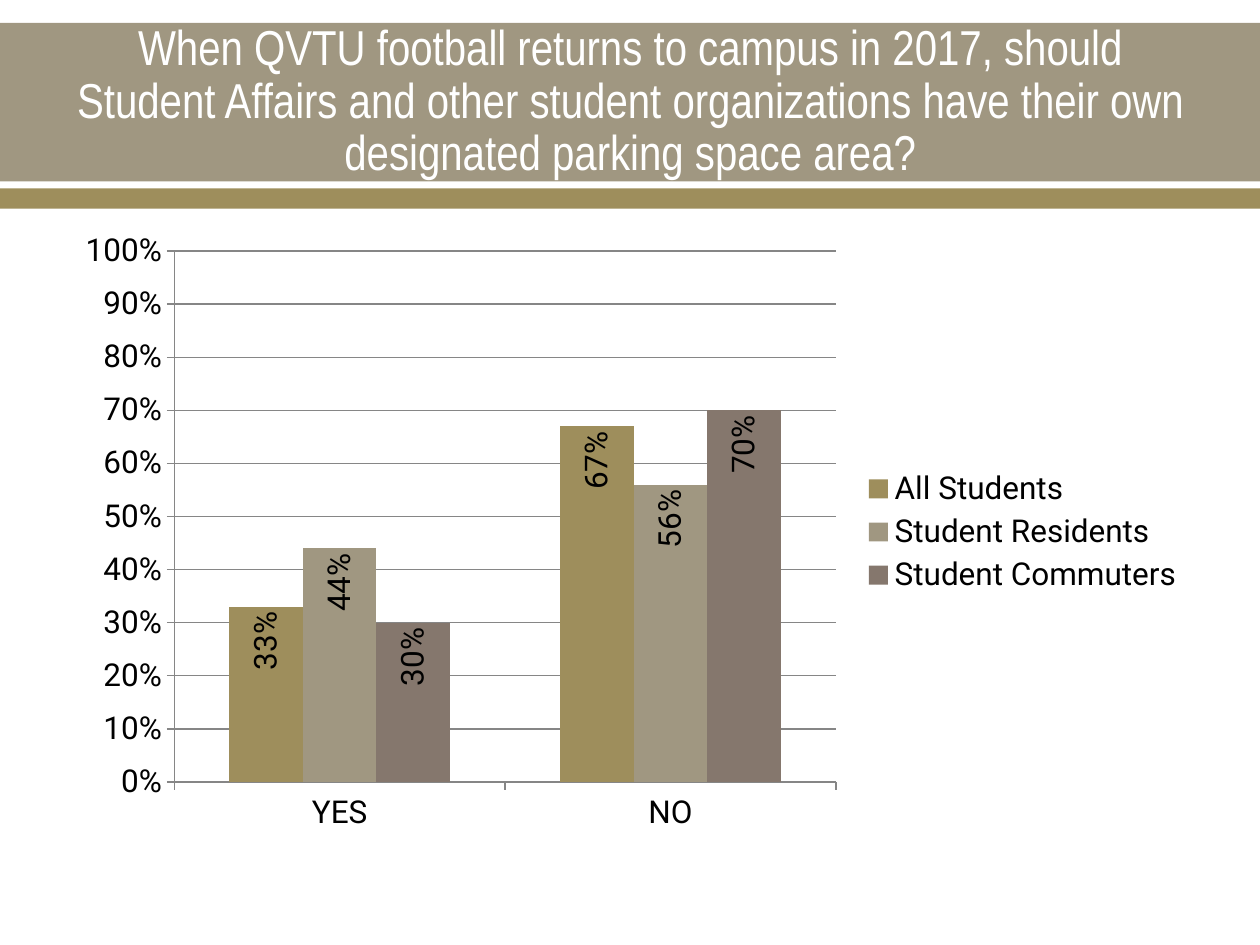
import dataclasses

import pptx
import pptx.chart.data
import pptx.dml.color
import pptx.enum.chart
import pptx.enum.shapes
import pptx.enum.text
import pptx.util


@dataclasses.dataclass(frozen=True)
class Theme:
    gold: str = "9E8E5C"
    stone: str = "A09781"
    taupe: str = "85776D"
    white: str = "FFFFFF"
    black: str = "000000"
    grid: str = "868686"
    title_font: str = "Arial Narrow"
    chart_font: str = "Roboto"
    title_size: int = 28
    chart_size: int = 18


class SurveySlide:
    """Draw the bands, title and chart of one survey question."""

    def __init__(self, slide, theme):
        self.slide = slide
        self.theme = theme

    def color(self, value):
        return pptx.dml.color.RGBColor.from_string(value)

    def box(self, left, top, width, height):
        return [pptx.util.Cm(length) for length in (left, top, width, height)]

    def style_font(self, font, name, size, color):
        font.name = name
        font.size = pptx.util.Pt(size)
        font.bold = False
        font.color.rgb = self.color(color)

    def style_line(self, line):
        line.color.rgb = self.color(self.theme.grid)
        line.width = pptx.util.Pt(0.75)

    def band(self, top, height, fill):
        shape = self.slide.shapes.add_shape(
            pptx.enum.shapes.MSO_SHAPE.RECTANGLE, *self.box(0, top, 25.4, height))
        shape.shadow.inherit = False
        shape.fill.solid()
        shape.fill.fore_color.rgb = self.color(fill)
        shape.line.fill.background()

    def title(self, text, *place):
        frame = self.slide.shapes.add_textbox(*self.box(*place)).text_frame
        frame.word_wrap = True
        frame.vertical_anchor = pptx.enum.text.MSO_ANCHOR.MIDDLE
        paragraph = frame.paragraphs[0]
        paragraph.text = text
        paragraph.alignment = pptx.enum.text.PP_ALIGN.CENTER
        paragraph.line_spacing = 0.9
        self.style_font(paragraph.font, self.theme.title_font,
                        self.theme.title_size, self.theme.white)

    def column_chart(self, categories, series_rows, *place):
        data = pptx.chart.data.CategoryChartData(number_format="0%")
        data.categories = categories
        for name, values, fill in series_rows:
            data.add_series(name, values)
        chart = self.slide.shapes.add_chart(
            pptx.enum.chart.XL_CHART_TYPE.COLUMN_CLUSTERED,
            *self.box(*place), data).chart
        chart.has_title = False
        self.style_font(chart.font, self.theme.chart_font,
                        self.theme.chart_size, self.theme.black)
        chart.has_legend = True
        chart.legend.position = pptx.enum.chart.XL_LEGEND_POSITION.RIGHT
        chart.legend.include_in_layout = False
        self.axes(chart)
        plot = chart.plots[0]
        plot.gap_width = 150
        plot.overlap = 0
        plot.vary_by_categories = False
        for series, (name, values, fill) in zip(plot.series, series_rows):
            series.format.fill.solid()
            series.format.fill.fore_color.rgb = self.color(fill)
            self.upright_labels(series.data_labels)

    def axes(self, chart):
        for axis in (chart.category_axis, chart.value_axis):
            axis.major_tick_mark = pptx.enum.chart.XL_TICK_MARK.OUTSIDE
            axis.minor_tick_mark = pptx.enum.chart.XL_TICK_MARK.NONE
            self.style_line(axis.format.line)
        value_axis = chart.value_axis
        value_axis.minimum_scale = 0
        value_axis.maximum_scale = 1
        value_axis.major_unit = 0.1
        value_axis.tick_labels.number_format = "0%"
        value_axis.tick_labels.number_format_is_linked = False
        value_axis.has_major_gridlines = True
        self.style_line(value_axis.major_gridlines.format.line)

    def upright_labels(self, labels):
        labels.show_value = True
        labels.number_format = "0%"
        labels.number_format_is_linked = False
        labels.position = pptx.enum.chart.XL_LABEL_POSITION.INSIDE_END
        self.style_font(labels.font, self.theme.chart_font,
                        self.theme.chart_size, self.theme.black)
        body = labels._element.xpath("c:txPr/a:bodyPr")[0]
        body.set("rot", "-5400000")
        body.set("vert", "horz")


def main():
    presentation = pptx.Presentation()
    presentation.slide_width = pptx.util.Cm(25.4)
    presentation.slide_height = pptx.util.Cm(19.05)
    theme = Theme()
    survey = SurveySlide(
        presentation.slides.add_slide(presentation.slide_layouts[6]), theme)
    survey.band(0.46, 3.2, theme.stone)
    survey.band(3.8, 0.41, theme.gold)
    survey.title(
        "When QVTU football returns to campus in 2017, should Student Affairs "
        "and other student organizations have their own designated parking "
        "space area?", 1.27, 0.51, 22.86, 3.1)
    survey.column_chart(
        ["YES", "NO"],
        [("All Students", (0.33, 0.67), theme.gold),
         ("Student Residents", (0.44, 0.56), theme.stone),
         ("Student Commuters", (0.3, 0.7), theme.taupe)],
        1.27, 4.44, 22.86, 12.57)
    presentation.save("out.pptx")


if __name__ == "__main__":
    main()
